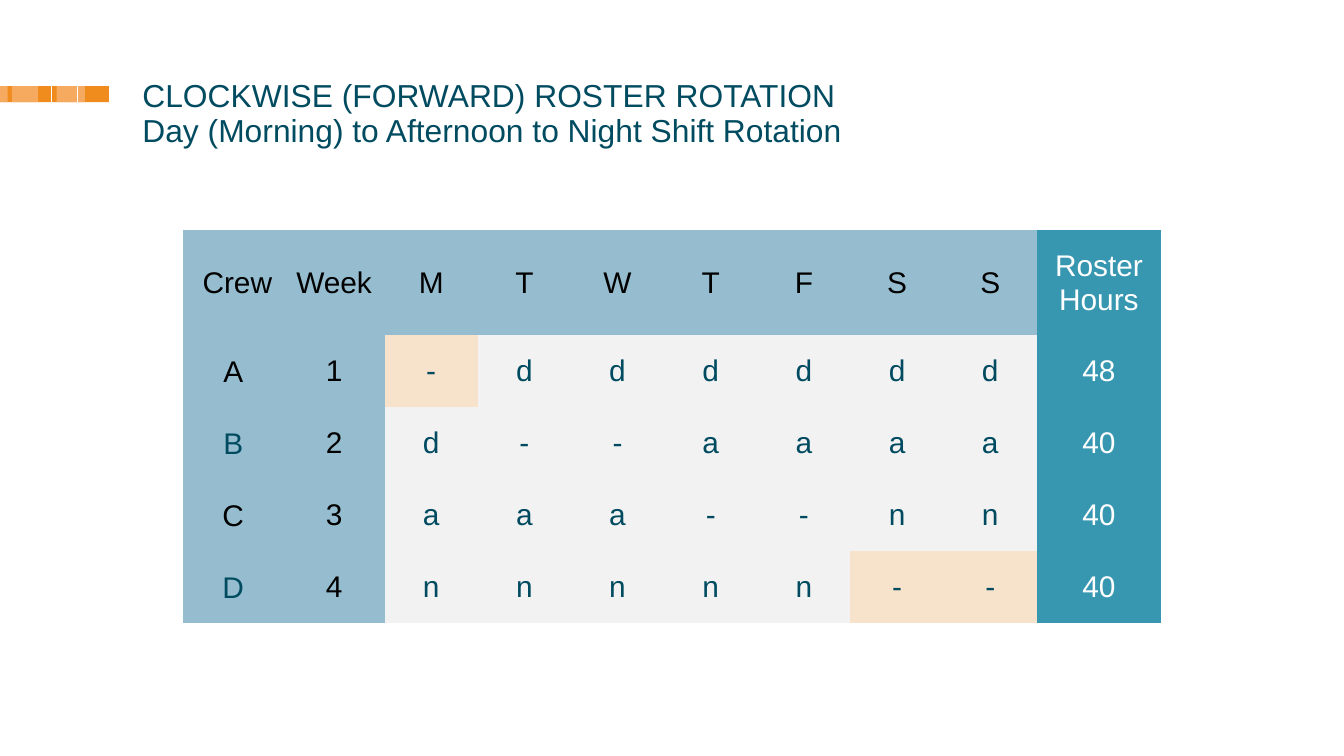
from collections import namedtuple
from dataclasses import dataclass

from lxml.etree import SubElement
from pptx import Presentation
from pptx.dml.color import RGBColor
from pptx.enum.shapes import MSO_CONNECTOR as Link, MSO_SHAPE as Shape
from pptx.enum.text import MSO_ANCHOR as Anchor, PP_ALIGN as Align
from pptx.oxml.ns import qn
from pptx.util import Inches, Pt

Box = namedtuple("Box", "left top width height")


@dataclass(frozen=True)
class Theme:
    font: str = "Arial"
    title_size: float = 17
    cell_size: float = 16
    ink: str = "004B60"
    black: str = "000000"
    white: str = "FFFFFF"
    orange: str = "F08B1D"
    light_orange: str = "F6AA5F"
    heading: str = "95BDCF"
    hours: str = "3797B1"
    shift: str = "F2F2F2"
    day_off: str = "F7E2CB"


THEME = Theme()
SLIDE_WIDTH = 10
SLIDE_HEIGHT = SLIDE_WIDTH * 9 / 16

TITLE = [
    "CLOCKWISE (FORWARD) ROSTER ROTATION",
    "Day (Morning) to Afternoon to Night Shift Rotation",
]
ROSTER = [
    [" Crew", "Week", *"MTWTFSS", "Roster Hours"],
    ["A", "1", *"-dddddd", "48"],
    ["B", "2", *"d--aaaa", "40"],
    ["C", "3", *"aaa--nn", "40"],
    ["D", "4", *"nnnnn--", "40"],
]
COLUMN_SHARES = [13, 13] + [12] * 7 + [16]
ROW_SHARES = [22] + [15] * 4
HOURS_COLUMN = 9
HIGHLIGHTED = {(1, 2), (4, 7), (4, 8)}


def rgb(code):
    return RGBColor.from_string(code)


def style(paragraph, size, color):
    font = paragraph.font
    font.name, font.size = THEME.font, Pt(size)
    font.color.rgb = rgb(color)


def draw_accent(slide, box):
    """Orange bar with lighter segments and white dividers."""
    segments = [
        (0, 1, THEME.orange),
        (0.52, 0.26, THEME.light_orange),
        (0.11, 0.24, THEME.light_orange),
        (0, 0.07, THEME.light_orange),
    ]
    for start, share, color in segments:
        segment = slide.shapes.add_shape(
            Shape.RECTANGLE,
            Inches(box.left + start * box.width), Inches(box.top),
            Inches(share * box.width), Inches(box.height))
        segment.shadow.inherit = False
        segment.fill.solid()
        segment.fill.fore_color.rgb = rgb(color)
        segment.line.fill.background()

    for share in (0.47, 0.71):
        x = Inches(box.left + share * box.width)
        divider = slide.shapes.add_connector(
            Link.STRAIGHT, x, Inches(box.top), x, Inches(box.top + box.height))
        divider.line.color.rgb = rgb(THEME.white)
        divider.line.width = Pt(0.63)
        SubElement(divider.element.spPr, qn("a:effectLst"))


def draw_title(slide, box):
    """Title lines, each in its own box, one line pitch apart."""
    pitch = box.height / 2
    for index, wording in enumerate(TITLE):
        heading = slide.shapes.add_textbox(
            Inches(box.left), Inches(box.top + index * pitch),
            Inches(box.width), Inches(box.height))
        frame = heading.text_frame
        frame.word_wrap = True
        frame.margin_left = frame.margin_right = 0
        frame.margin_top = frame.margin_bottom = 0
        frame.text = wording
        paragraph = frame.paragraphs[0]
        paragraph.line_spacing = 0.85
        paragraph.space_after = Pt(12)
        style(paragraph, THEME.title_size, THEME.ink)


def cell_colors(row, column):
    """Fill and text colour by the cell's role in the roster."""
    if column == HOURS_COLUMN:
        return THEME.hours, THEME.white
    if row == 0 or column == 1:
        return THEME.heading, THEME.black
    if column == 0:
        return THEME.heading, THEME.black if row % 2 else THEME.ink
    if (row, column) in HIGHLIGHTED:
        return THEME.day_off, THEME.ink
    return THEME.shift, THEME.ink


def draw_roster(slide, box):
    """Crew roster with columns and rows sized by share."""
    table = slide.shapes.add_table(
        len(ROW_SHARES), len(COLUMN_SHARES), *map(Inches, box)).table
    for column, share in zip(table.columns, COLUMN_SHARES):
        column.width = Inches(box.width * share / sum(COLUMN_SHARES))
    for row, share in zip(table.rows, ROW_SHARES):
        row.height = Inches(box.height * share / sum(ROW_SHARES))

    for row, entries in enumerate(ROSTER):
        for column, entry in enumerate(entries):
            cell = table.cell(row, column)
            fill, ink = cell_colors(row, column)
            cell.fill.solid()
            cell.fill.fore_color.rgb = rgb(fill)
            cell.vertical_anchor = Anchor.MIDDLE
            if row == 0 or column == 0:
                cell.margin_left = cell.margin_right = Inches(0.01)
                cell.margin_top, cell.margin_bottom = Inches(0.01), 0
            cell.text = entry
            paragraph = cell.text_frame.paragraphs[0]
            paragraph.alignment = Align.CENTER
            style(paragraph, THEME.cell_size, ink)
    # Plain grid: no style borders or bands
    table.first_row = table.horz_banding = False
    table._tbl.tblPr.find(qn("a:tableStyleId")).text = (
        "{2D5ABB26-0587-4C30-8999-92F81FD0307C}")


def main():
    deck = Presentation()
    deck.slide_width, deck.slide_height = Inches(SLIDE_WIDTH), Inches(SLIDE_HEIGHT)
    slide = deck.slides.add_slide(deck.slide_layouts[6])
    draw_accent(slide, Box(0, 0.64, 0.81, 0.12))
    draw_title(slide, Box(1.06, 0.61, 8.27, 0.52))
    draw_roster(slide, Box(1.36, 1.71, 7.28, 2.93))
    deck.save("out.pptx")


if __name__ == "__main__":
    main()
